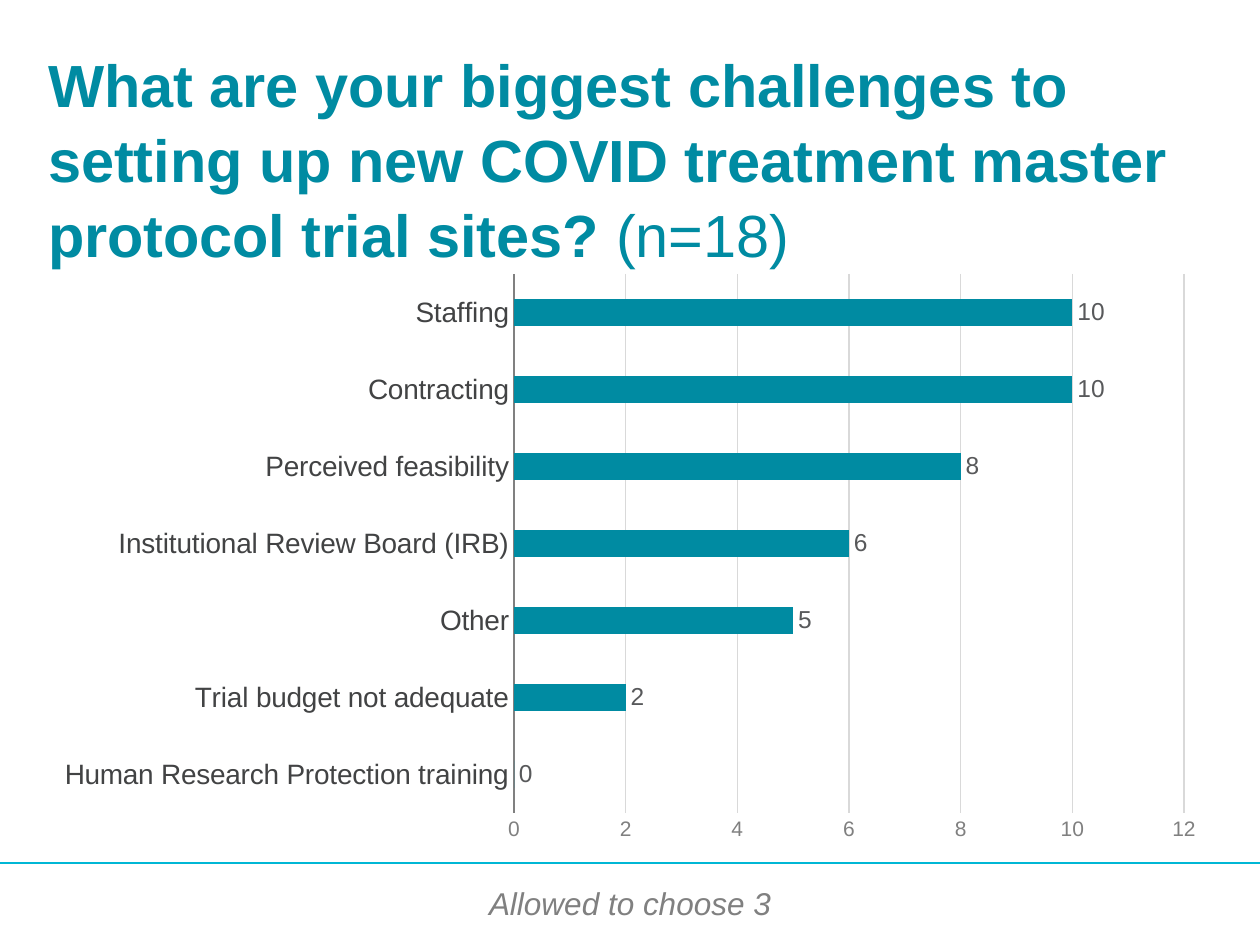
from dataclasses import dataclass

from lxml import etree
from pptx import Presentation
from pptx.chart.data import CategoryChartData
from pptx.dml.color import RGBColor
from pptx.enum.chart import XL_CHART_TYPE, XL_LABEL_POSITION, XL_TICK_MARK
from pptx.enum.shapes import MSO_CONNECTOR, MSO_SHAPE
from pptx.enum.text import MSO_ANCHOR, PP_ALIGN
from pptx.oxml import parse_xml
from pptx.oxml.ns import nsdecls, qn
from pptx.util import Pt

BAR = XL_CHART_TYPE.BAR_CLUSTERED
OUTSIDE_END = XL_LABEL_POSITION.OUTSIDE_END
NO_TICK = XL_TICK_MARK.NONE
RECTANGLE = MSO_SHAPE.RECTANGLE
STRAIGHT = MSO_CONNECTOR.STRAIGHT
MIDDLE, TOP = MSO_ANCHOR.MIDDLE, MSO_ANCHOR.TOP
LEFT, CENTER = PP_ALIGN.LEFT, PP_ALIGN.CENTER

PX_PER_INCH = 126


def px(length: int) -> int:
    return round(length * 914400 / PX_PER_INCH)


@dataclass(frozen=True)
class Theme:
    font: str = "Arial"
    teal: str = "008BA2"
    rule: str = "00B7D5"
    white: str = "FFFFFF"
    gray: str = "808080"
    grid: str = "D9D9D9"
    category: str = "424344"
    value: str = "58595B"
    title_size: int = 34
    note_size: int = 18
    category_size: int = 16
    value_size: int = 14
    axis_size: int = 12
    line_width: float = 0.75


@dataclass(frozen=True)
class Area:
    left: int
    top: int
    width: int
    height: int

    def emu(self) -> tuple[int, ...]:
        return tuple(px(n) for n in (self.left, self.top, self.width, self.height))


@dataclass(frozen=True)
class Span:
    text: str
    bold: bool = False
    italic: bool = False


@dataclass(frozen=True)
class Answer:
    label: str
    votes: int


THEME = Theme()
PAGE = Area(0, 0, 1260, 945)
TITLE = Area(48, 140, 1165, 106)
CHART = Area(42, 262, 1178, 590)
PLOT = Area(514, 274, 670, 539)
FOOTER = Area(0, 861, 1260, 84)
RULE_TOP = 863
NOTE = Area(471, 878, 318, 50)

ANSWERS = [
    Answer("Staffing", 10),
    Answer("Contracting", 10),
    Answer("Perceived feasibility", 8),
    Answer("Institutional Review Board (IRB)", 6),
    Answer("Other", 5),
    Answer("Trial budget not adequate", 2),
    Answer("Human Research Protection training", 0),
]


def rgb(color: str) -> RGBColor:
    return RGBColor.from_string(color)


def style_font(font, size: int, color: str) -> None:
    font.name = THEME.font
    font.size = Pt(size)
    font.color.rgb = rgb(color)


def style_line(line, color: str) -> None:
    line.color.rgb = rgb(color)
    line.width = Pt(THEME.line_width)


def add_text(page, area: Area, spans: list[Span], *, size: int, color: str,
             align=LEFT, anchor=TOP, wrap: bool = True, spacing: float = 1.0,
             margins: tuple[int, int, int, int] = (0, 0, 0, 0)) -> None:
    frame = page.shapes.add_textbox(*area.emu()).text_frame
    frame.word_wrap = wrap
    frame.vertical_anchor = anchor
    frame.margin_left, frame.margin_top, frame.margin_right, frame.margin_bottom = map(px, margins)
    para = frame.paragraphs[0]
    para.alignment = align
    para.line_spacing = spacing
    for span in spans:
        run = para.add_run()
        run.text = span.text
        style_font(run.font, size, color)
        run.font.bold = span.bold
        run.font.italic = span.italic


def add_footer(page) -> None:
    band = page.shapes.add_shape(RECTANGLE, *FOOTER.emu())
    band.shadow.inherit = False
    band.fill.solid()
    band.fill.fore_color.rgb = rgb(THEME.white)
    band.line.fill.background()
    rule = page.shapes.add_connector(STRAIGHT, 0, px(RULE_TOP), px(PAGE.width), px(RULE_TOP))
    style_line(rule.line, THEME.rule)
    etree.SubElement(rule._element.spPr, qn("a:effectLst"))
    add_text(page, NOTE, [Span("Allowed to choose 3", italic=True)],
             size=THEME.note_size, color=THEME.gray, align=CENTER, wrap=False,
             margins=(13, 6, 13, 6))


def place_plot(chart) -> None:
    fractions = {
        "x": (PLOT.left - CHART.left) / CHART.width,
        "y": (PLOT.top - CHART.top) / CHART.height,
        "w": PLOT.width / CHART.width,
        "h": PLOT.height / CHART.height,
    }
    sizes = "".join(f'<c:{key} val="{value:.4f}"/>' for key, value in fractions.items())
    layout = parse_xml(
        f'<c:layout {nsdecls("c")}><c:manualLayout><c:layoutTarget val="inner"/>'
        f'<c:xMode val="edge"/><c:yMode val="edge"/>{sizes}</c:manualLayout></c:layout>'
    )
    plot_area = chart._chartSpace.chart.plotArea
    for present in plot_area.findall(qn("c:layout")):
        plot_area.remove(present)
    plot_area.insert(0, layout)


def add_answer_chart(page, answers: list[Answer]) -> None:
    data = CategoryChartData()
    upward = answers[::-1]
    data.categories = [answer.label for answer in upward]
    data.add_series("Series 1", [answer.votes for answer in upward])
    chart = page.shapes.add_chart(BAR, *CHART.emu(), data).chart
    chart.has_legend = False
    chart.has_title = False
    style_font(chart.font, THEME.axis_size, THEME.gray)
    place_plot(chart)

    plot = chart.plots[0]
    plot.gap_width = 182
    plot.vary_by_categories = False
    bars = plot.series[0]
    bars.format.fill.solid()
    bars.format.fill.fore_color.rgb = rgb(THEME.teal)
    labels = bars.data_labels
    labels.show_value = True
    labels.position = OUTSIDE_END
    style_font(labels.font, THEME.value_size, THEME.value)

    names, votes = chart.category_axis, chart.value_axis
    for axis in (names, votes):
        axis.major_tick_mark = NO_TICK
        axis.minor_tick_mark = NO_TICK
    style_font(names.tick_labels.font, THEME.category_size, THEME.category)
    style_line(names.format.line, THEME.gray)
    style_font(votes.tick_labels.font, THEME.axis_size, THEME.gray)
    votes.format.line.fill.background()
    votes.minimum_scale, votes.maximum_scale, votes.major_unit = 0, 12, 2
    style_line(votes.major_gridlines.format.line, THEME.grid)


def main() -> None:
    deck = Presentation()
    deck.slide_width, deck.slide_height = px(PAGE.width), px(PAGE.height)
    page = deck.slides.add_slide(deck.slide_layouts[6])
    add_footer(page)
    add_answer_chart(page, ANSWERS)
    question = ("What are your biggest challenges to setting up new COVID "
                "treatment master protocol trial sites? ")
    add_text(page, TITLE, [Span(question, bold=True), Span("(n=18)")],
             size=THEME.title_size, color=THEME.teal, anchor=MIDDLE,
             spacing=1.05, margins=(0, 0, 0, 72))
    deck.save("out.pptx")


if __name__ == "__main__":
    main()
